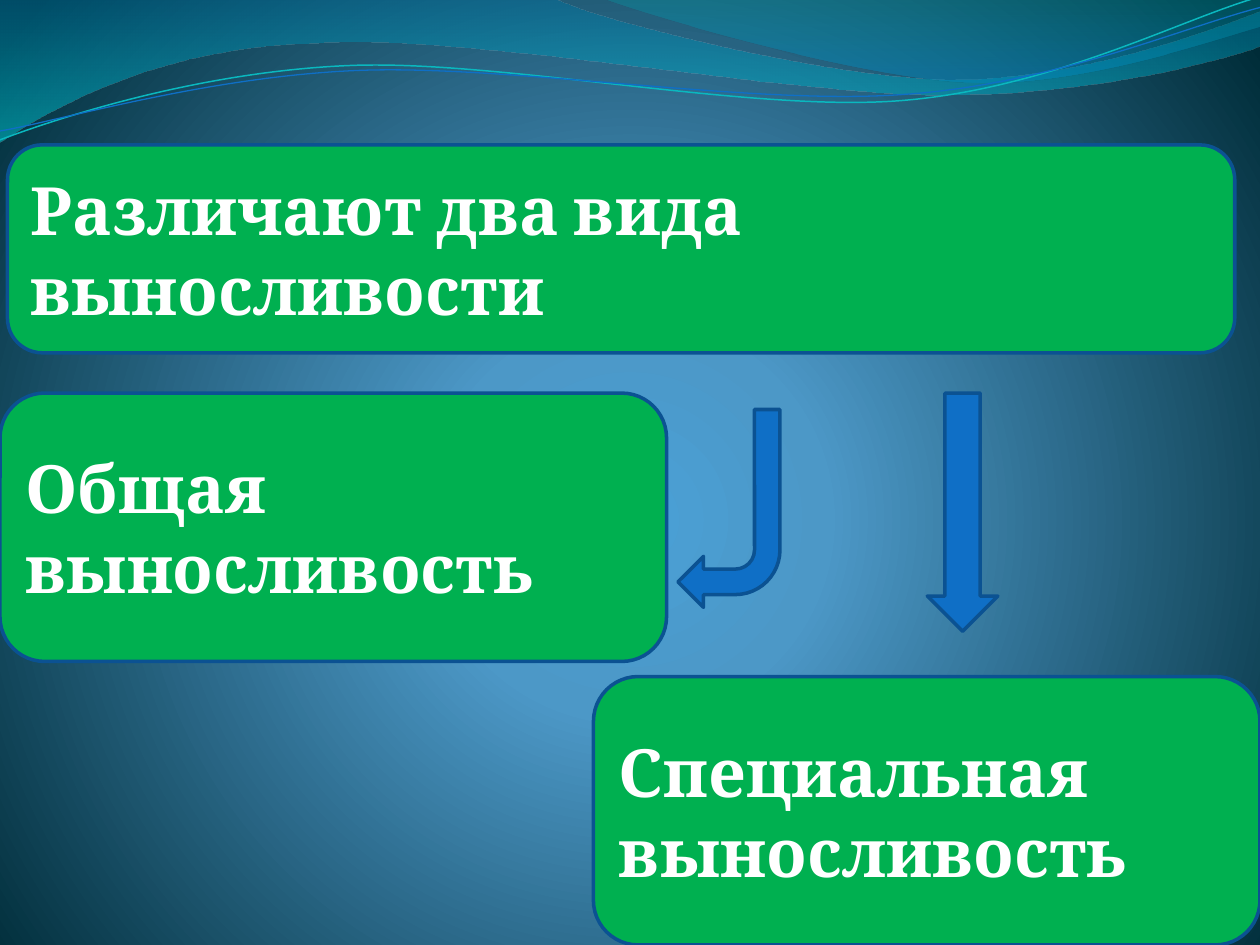
from math import cos, radians, sin

from lxml.etree import SubElement
from pptx import Presentation
from pptx.dml.color import RGBColor
from pptx.enum.shapes import MSO_SHAPE as Shape
from pptx.enum.text import MSO_ANCHOR as Anchor, PP_ALIGN as Align
from pptx.oxml import parse_xml
from pptx.oxml.ns import nsdecls, qn
from pptx.util import Emu, Inches, Pt

COLORS = {
    "box": "00B050", "arrow": "0F6FC6", "outline": "0B5292", "text": "FFFFFF",
    "teal line": "0AB8BF", "blue line": "0F6FC6",
}
# Gradient stops: position, colour, opacity (all but colour in percent)
BACKGROUND = [(0, "4AA0D6", 100), (25, "4C98C7", 100), (100, "002C38", 100)]
BROAD_BAND = [(0, "0074A1", 45), (100, "00C6CF", 55)]
RIGHT_BAND = [(0, "00A1A9", 30), (80, "008BBF", 45)]
DOWNWARD = '<a:lin ang="5400000" scaled="1"/>'
RADIAL = ('<a:path path="circle"><a:fillToRect l="10000" t="110000" '
          'r="10000" b="100000"/></a:path>')


def gradient(stops, direction):
    marks = "".join(
        f'<a:gs pos="{place * 1000}"><a:srgbClr val="{color}">'
        + (f'<a:alpha val="{opacity * 1000}"/>' if opacity < 100 else "")
        + '</a:srgbClr></a:gs>'
        for place, color, opacity in stops)
    return parse_xml(f'<a:gradFill {nsdecls("a")} rotWithShape="1">'
                     f'<a:gsLst>{marks}</a:gsLst>{direction}</a:gradFill>')


def turned(point, center, angle):
    """The point turned clockwise about the center."""
    across, down = point[0] - center[0], point[1] - center[1]
    c, s = cos(radians(angle)), sin(radians(angle))
    return center[0] + across * c - down * s, center[1] + across * s + down * c


def write(shape, text, *, font, size, color, bold=True):
    frame = shape.text_frame
    frame.word_wrap = True
    frame.vertical_anchor = Anchor.MIDDLE
    para = frame.paragraphs[0]
    para.alignment = Align.LEFT
    span = para.add_run()
    span.text = text
    span.font.name, span.font.size, span.font.bold = font, Pt(size), bold
    span.font.color.rgb = RGBColor.from_string(color)


class Painter:
    """Style and current slide; lengths are counted on a 10 by 7.5 grid."""
    columns, rows = 10, 7.5
    font, size, outline = "Cambria", 38, 2
    tilt = 357.3

    def __init__(self, deck):
        self.column = deck.slide_width / self.columns
        self.row = deck.slide_height / self.rows
        self.page = deck.slides.add_slide(deck.slide_layouts[6])

    def background(self, stops):
        self.page.background.fill.solid()
        properties = self.page.element.find(".//" + qn("p:bgPr"))
        properties.replace(properties[0], gradient(stops, RADIAL))

    def _style(self, shape, fill, line, width):
        shape.shadow.inherit = False
        if fill:
            shape.fill.solid()
            shape.fill.fore_color.rgb = RGBColor.from_string(COLORS[fill])
        else:
            shape.fill.background()
        if line:
            shape.line.color.rgb = RGBColor.from_string(COLORS[line])
            shape.line.width = Pt(width)
        else:
            shape.line.fill.background()

    def _curve(self, segments, closed):
        """Segments hold one point (straight) or three (Bézier)."""
        places = [(round(x * self.column), round(y * self.row))
                  for segment in segments for x, y in segment]
        builder = self.page.shapes.build_freeform(*places[0])
        builder.add_line_segments(places[1:], close=closed)
        shape = builder.convert_to_shape()
        straight = iter(shape.element.findall(".//" + qn("a:lnTo")))
        for segment in segments[1:]:
            pieces = [next(straight) for _ in segment]
            if len(pieces) == 3:
                outline = pieces[0].getparent()
                bend = SubElement(outline, qn("a:cubicBezTo"))
                outline.replace(pieces[0], bend)
                for piece in pieces:
                    bend.append(piece[0])
                for piece in pieces[1:]:
                    outline.remove(piece)
        return shape

    def band(self, segments, stops):
        shape = self._curve(segments, True)
        self._style(shape, "box", None, 0)
        properties = shape.element.spPr
        properties.replace(properties.find(qn("a:solidFill")),
                           gradient(stops, DOWNWARD))

    def wave(self, segments, center, color, width):
        level = [[turned(point, center, -self.tilt) for point in segment]
                 for segment in segments]
        shape = self._curve(level, False)
        shape.rotation = self.tilt
        self._style(shape, None, color, width)

    def figure(self, kind, left, top, width, height, fill, turn=0):
        shape = self.page.shapes.add_shape(
            kind, Emu(round(left * self.column)), Emu(round(top * self.row)),
            Emu(round(width * self.column)), Emu(round(height * self.row)))
        shape.rotation = turn
        self._style(shape, fill, "outline", self.outline)
        return shape

    def box(self, text, *place):
        shape = self.figure(Shape.ROUNDED_RECTANGLE, *place, "box")
        write(shape, text, font=self.font, size=self.size, color=COLORS["text"])


def main():
    deck = Presentation()
    deck.slide_width, deck.slide_height = Inches(10), Inches(7.5)
    painter = Painter(deck)
    painter.background(BACKGROUND)

    # Translucent bands along the top
    painter.band([
        [(0, 0)], [(4.4, -0.01)],
        [(4.76, 0.17), (6.64, 0.63), (7.58, 0.63)],
        [(8.53, 0.63), (9.58, 0.26), (10, 0.09)],
        [(10.01, 0.36)],
        [(9.83, 0.44), (8.7, 0.76), (7.46, 0.75)],
        [(6.22, 0.75), (3.82, 0.28), (2.57, 0.34)],
        [(1.29, 0.36), (0.46, 0.83), (-0.01, 1.13)]], BROAD_BAND)
    painter.band([
        [(4.79, -0.01)],
        [(5.09, 0.11), (6.82, 0.62), (7.69, 0.65)],
        [(8.56, 0.69), (9.61, 0.32), (10, 0.21)],
        [(10, 0)]], RIGHT_BAND)

    # Thin waves over the bands
    painter.wave([
        [(0, 1.11)],
        [(0.48, 0.93), (1.58, 0.57), (2.77, 0.52)],
        [(3.95, 0.47), (5.93, 0.89), (7.13, 0.8)],
        [(8.33, 0.71), (9.38, 0.15), (9.98, -0.02)]],
        (4.99, 0.57), "teal line", 0.85)
    painter.wave([
        [(0, 1.04)],
        [(0.47, 0.96), (1.64, 0.61), (2.83, 0.56)],
        [(4.03, 0.51), (5.97, 0.84), (7.17, 0.75)],
        [(8.36, 0.67), (9.41, 0.21), (10, 0.06)]],
        (5, 0.59), "blue line", 0.75)

    # Heading and the two kinds, set against opposite edges
    width, height = 5.29, 2.13
    painter.box("Различают два вида выносливости", 0.06, 1.15, 9.74, 1.65)
    painter.box("Общая выносливость", 0, 3.12, width, height)
    painter.box("Специальная выносливость", painter.columns - width,
                painter.rows - height, width, height)

    # Arrows from the heading to each kind
    painter.figure(Shape.BENT_ARROW, 5.38, 3.25, 0.81, 1.57, "arrow", turn=180)
    painter.figure(Shape.DOWN_ARROW, 7.36, 3.12, 0.56, 1.89, "arrow")

    deck.save("out.pptx")


if __name__ == "__main__":
    main()
